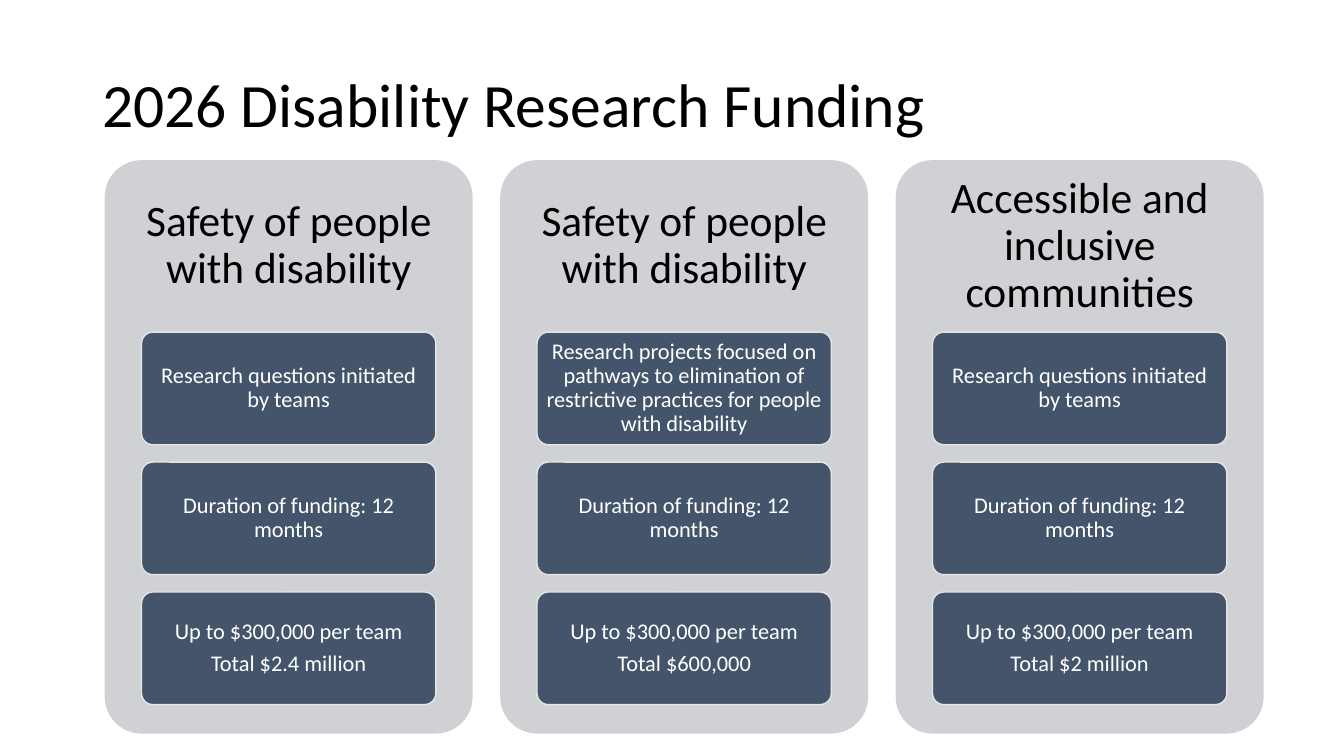
from pptx import Presentation
from pptx.dml.color import RGBColor
from pptx.enum import shapes, text
from pptx.util import Pt

BLACK = RGBColor(0x00, 0x00, 0x00)
WHITE = RGBColor(0xFF, 0xFF, 0xFF)
GREY = RGBColor(0xCF, 0xD1, 0xD4)
SLATE = RGBColor(0x44, 0x54, 0x6A)
PALE = RGBColor(0xE7, 0xE6, 0xE6)
ROUND = shapes.MSO_SHAPE.ROUNDED_RECTANGLE
LEFT = text.PP_ALIGN.LEFT
MID = text.PP_ALIGN.CENTER

TEAMS = "Research questions initiated by teams"
TERM = "Duration of funding: 12 months"
GRANT = "Up to $300,000 per team"
STREAMS = [
    ("Safety of people with disability", TEAMS, "Total $2.4 million"),
    ("Safety of people with disability",
     "Research projects focused on pathways to elimination of "
     "restrictive practices for people with disability",
     "Total $600,000"),
    ("Accessible and inclusive communities", TEAMS, "Total $2 million"),
]

deck = Presentation()
deck.slide_width, deck.slide_height = Pt(960), Pt(540)
slide = deck.slides.add_slide(deck.slide_layouts[6])


def add_round(x, y, w, h, fill):
    shape = slide.shapes.add_shape(ROUND, Pt(x), Pt(y), Pt(w), Pt(h))
    shape.adjustments[0] = 0.1
    shape.shadow.inherit = False
    shape.fill.solid()
    shape.fill.fore_color.rgb = fill
    shape.line.fill.background()
    return shape


def write(shape, lines, size, color, align, after, side, edge):
    frame = shape.text_frame
    form = {"word_wrap": True, "vertical_anchor": text.MSO_ANCHOR.MIDDLE,
            "margin_left": Pt(side), "margin_right": Pt(side),
            "margin_top": Pt(edge), "margin_bottom": Pt(edge)}
    for key, value in form.items():
        setattr(frame, key, value)
    frame.text = "\n".join(lines)
    for para in frame.paragraphs:
        form = {"alignment": align, "line_spacing": 0.9,
                "space_before": Pt(0), "space_after": Pt(after)}
        for key, value in form.items():
            setattr(para, key, value)
        for key, value in {"name": "Calibri", "size": Pt(size)}.items():
            setattr(para.font, key, value)
        para.font.color.rgb = color


title = slide.shapes.add_textbox(Pt(66), Pt(24.5), Pt(828), Pt(104.4))
write(title, ["2026 Disability Research Funding"], 44, BLACK, LEFT, 0, 7.2, 3.6)

for col, (theme, focus, total) in enumerate(STREAMS):
    x = 74.8 + col * 282.5
    add_round(x, 114.4, 262.8, 409.6, GREY)
    head = slide.shapes.add_textbox(Pt(x), Pt(114.4), Pt(262.8), Pt(122.9))
    write(head, [theme], 31, BLACK, MID, 10.85, 9.3, 9.3)
    for row, lines in enumerate([[focus], [TERM], [GRANT, total]]):
        box = add_round(x + 26.3, 237.3 + row * 92.8, 210.2, 80.4, SLATE)
        box.line.color.rgb = PALE
        box.line.width = Pt(1)
        write(box, lines, 16, WHITE, MID, 5.6, 3.2, 2.4)

deck.save("out.pptx")
